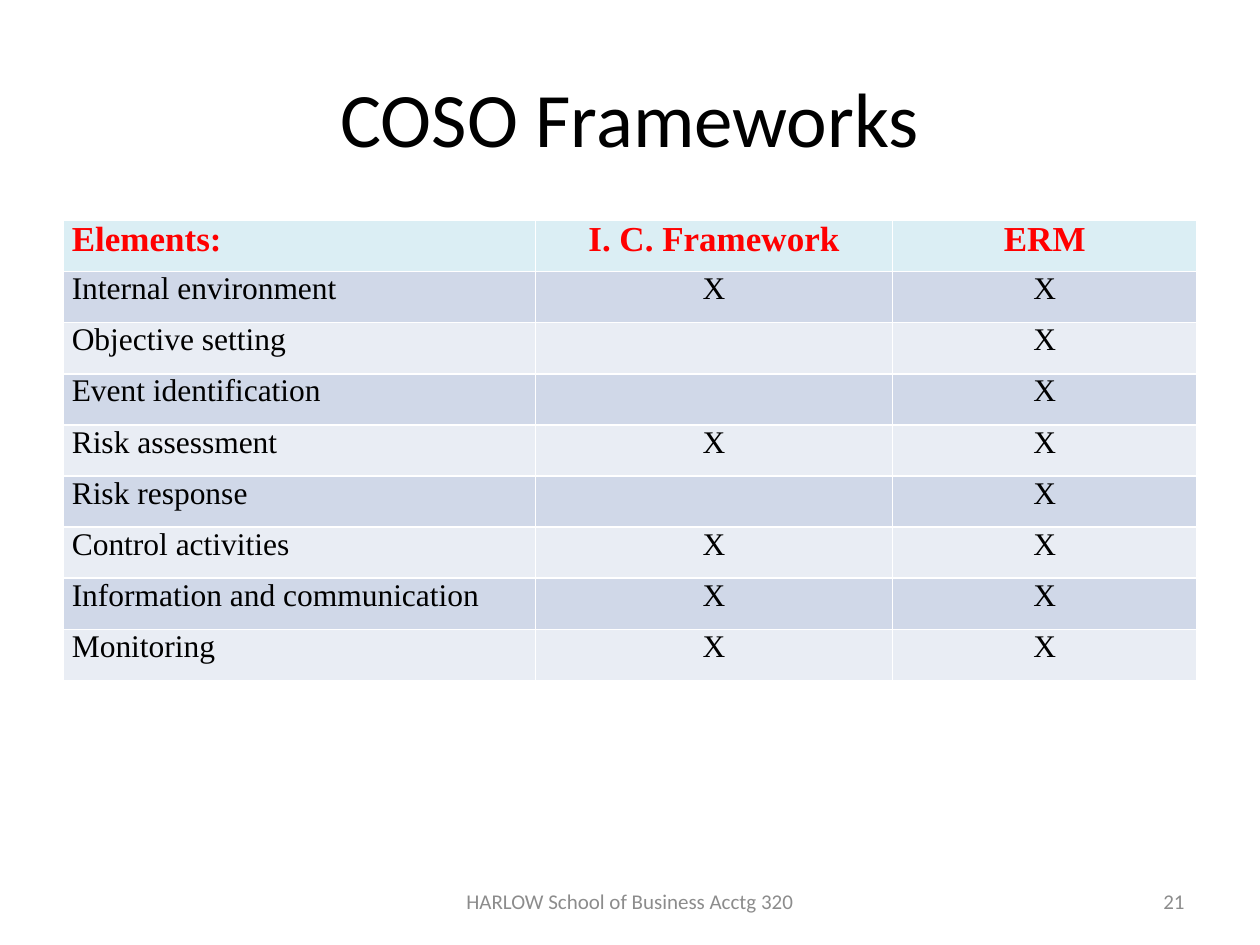
"""Build a slide with a table comparing two control frameworks."""
from dataclasses import dataclass

from pptx import Presentation
from pptx.dml.color import RGBColor
from pptx.enum.text import MSO_ANCHOR as Anchor, PP_ALIGN as Align
from pptx.util import Inches, Pt

SLIDE_WIDTH, SLIDE_HEIGHT = Inches(10), Inches(7.5)
GRID_COLUMN = SLIDE_WIDTH // 120
GRID_ROW = SLIDE_HEIGHT // 150


@dataclass(frozen=True)
class Box:
    """A rectangle in grid columns and rows."""
    column: int
    row: int
    columns: int
    rows: int

    def lengths(self) -> tuple[int, int, int, int]:
        """Return left, top, width and height."""
        return (self.column * GRID_COLUMN, self.row * GRID_ROW,
                self.columns * GRID_COLUMN, self.rows * GRID_ROW)


@dataclass(frozen=True)
class TextStyle:
    """The look of one paragraph."""
    font: str
    size: int
    color: str
    bold: bool = False


@dataclass(frozen=True)
class Label:
    """A single line of text in its box."""
    text: str
    box: Box
    align: Align
    style: TextStyle


@dataclass(frozen=True)
class Element:
    """A control element and the frameworks that hold it."""
    name: str
    in_control: bool
    in_erm: bool = True

    def texts(self) -> tuple[str, str, str]:
        """Return the texts of the table row."""
        return (self.name, "X" if self.in_control else "", "X" if self.in_erm else "")


TITLE_STYLE = TextStyle("Calibri", 44, "000000")
FOOTER_STYLE = TextStyle("Calibri", 12, "8C8C8C")
HEADER_STYLE = TextStyle("Times New Roman", 20, "FF0000", True)
BODY_STYLE = TextStyle("Times New Roman", 18, "000000")
HEADER_FILL = "DBEEF4"
BAND_FILLS = ("D0D8E8", "E9EDF4")

LABELS = (
    Label("COSO Frameworks", Box(6, 6, 108, 25), Align.CENTER, TITLE_STYLE),
    Label("HARLOW School of Business Acctg 320", Box(41, 139, 38, 8), Align.CENTER, FOOTER_STYLE),
    Label("21", Box(86, 139, 28, 8), Align.RIGHT, FOOTER_STYLE),
)
TABLE_BOX = Box(6, 35, 108, 73)
TABLE_COLUMNS = (45, 34, 29)
HEADINGS = ("Elements:", "I. C. Framework", "ERM")
ELEMENTS = (
    Element("Internal environment", True),
    Element("Objective setting", False),
    Element("Event identification", False),
    Element("Risk assessment", True),
    Element("Risk response", False),
    Element("Control activities", True),
    Element("Information and communication", True),
    Element("Monitoring", True),
)


def color(value: str) -> RGBColor:
    """Turn a hex string into a colour."""
    return RGBColor.from_string(value)


def write(frame, text: str, align: Align, style: TextStyle) -> None:
    """Put styled text in a text frame."""
    frame.word_wrap = True
    paragraph = frame.paragraphs[0]
    paragraph.text = text
    paragraph.alignment = align
    paragraph.font.name = style.font
    paragraph.font.size = Pt(style.size)
    paragraph.font.bold = style.bold
    paragraph.font.color.rgb = color(style.color)


def add_label(slide, label: Label) -> None:
    """Add a text box with vertically centred text."""
    frame = slide.shapes.add_textbox(*label.box.lengths()).text_frame
    write(frame, label.text, label.align, label.style)
    frame.vertical_anchor = Anchor.MIDDLE


def fill_row(row, texts: tuple[str, ...], style: TextStyle, fill: str) -> None:
    """Write and colour one table row."""
    for index, (cell, text) in enumerate(zip(row.cells, texts)):
        cell.margin_left = cell.margin_right = Inches(0.07)
        cell.margin_top = cell.margin_bottom = 0
        cell.fill.solid()
        cell.fill.fore_color.rgb = color(fill)
        write(cell.text_frame, text, Align.CENTER if index else Align.LEFT, style)


def add_framework_table(slide) -> None:
    """Add the table of elements by framework."""
    table = slide.shapes.add_table(
        len(ELEMENTS) + 1, len(HEADINGS), *TABLE_BOX.lengths()).table
    for column, width in zip(table.columns, TABLE_COLUMNS):
        column.width = width * GRID_COLUMN
    header, *body = table.rows
    fill_row(header, HEADINGS, HEADER_STYLE, HEADER_FILL)
    for index, (row, element) in enumerate(zip(body, ELEMENTS)):
        fill_row(row, element.texts(), BODY_STYLE, BAND_FILLS[index % 2])


def main() -> None:
    """Build and save the presentation."""
    presentation = Presentation()
    presentation.slide_width, presentation.slide_height = SLIDE_WIDTH, SLIDE_HEIGHT
    slide = presentation.slides.add_slide(presentation.slide_layouts[6])
    for label in LABELS:
        add_label(slide, label)
    add_framework_table(slide)
    presentation.save("out.pptx")


if __name__ == "__main__":
    main()
